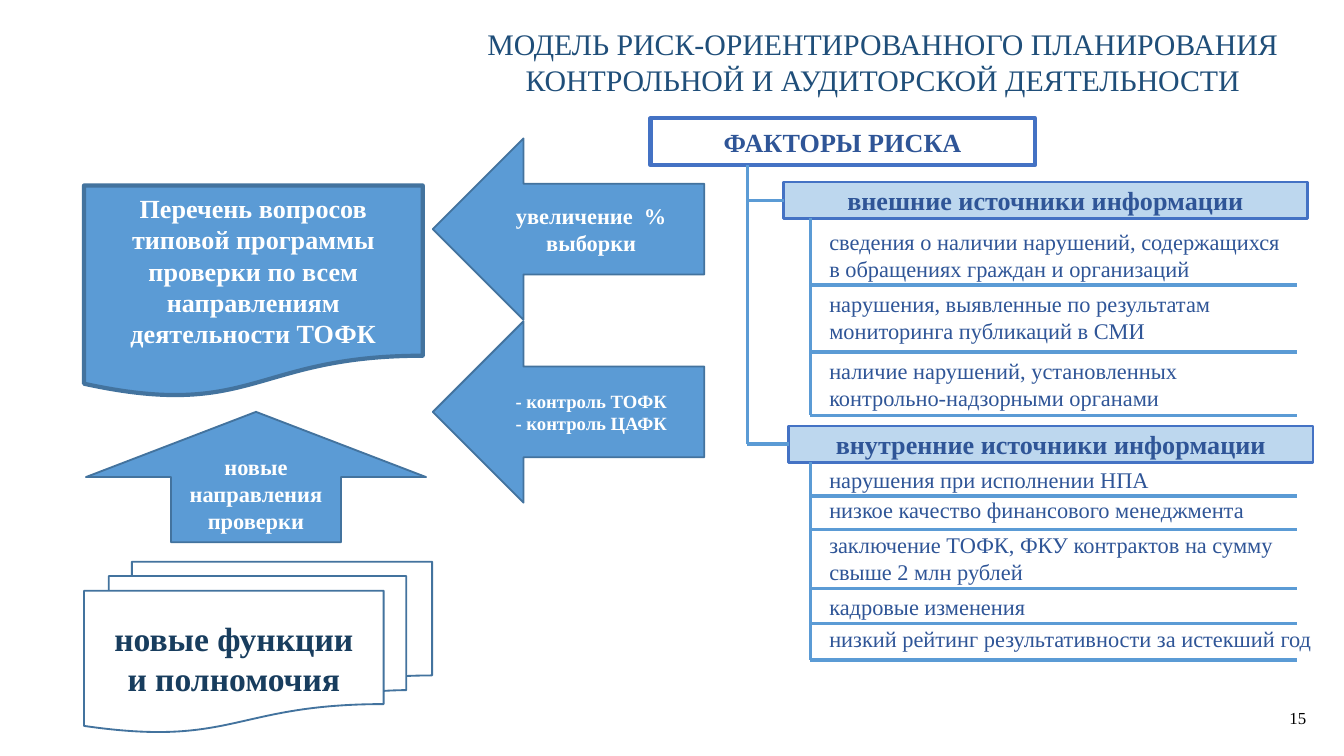
"""Build a slide on risk-based planning of control and audit work."""
from dataclasses import dataclass

from pptx import Presentation
from pptx.dml.color import RGBColor
from pptx.enum.shapes import MSO_CONNECTOR, MSO_SHAPE
from pptx.enum.text import MSO_ANCHOR, MSO_AUTO_SIZE, PP_ALIGN
from pptx.oxml.xmlchemy import OxmlElement
from pptx.shapes.autoshape import Shape
from pptx.shapes.connector import Connector
from pptx.shapes.shapetree import SlideShapes
from pptx.util import Inches, Length, Pt

STRAIGHT = MSO_CONNECTOR.STRAIGHT
RECTANGLE = MSO_SHAPE.RECTANGLE
DOCUMENT = MSO_SHAPE.FLOWCHART_DOCUMENT
MULTIDOCUMENT = MSO_SHAPE.FLOWCHART_MULTIDOCUMENT
LEFT_ARROW = MSO_SHAPE.LEFT_ARROW
UP_ARROW = MSO_SHAPE.UP_ARROW
TOP, MIDDLE = MSO_ANCHOR.TOP, MSO_ANCHOR.MIDDLE
LEFT, CENTER, RIGHT = PP_ALIGN.LEFT, PP_ALIGN.CENTER, PP_ALIGN.RIGHT
FIT_TEXT = MSO_AUTO_SIZE.SHAPE_TO_FIT_TEXT

FONT = "Times New Roman"
COLORS = {
    "title": "1F4E79",
    "text": "2F5597",
    "functions": "183D5E",
    "white": "FFFFFF",
    "black": "000000",
    "blue": "5B9BD5",
    "pale": "BDD7EE",
    "edge": "43739E",
    "frame": "4472C4",
}
COLUMNS, ROWS = 100, 56.25
CELL = 0.1
LEFT_SIDE = 1
TRUNK_X, SPINE_X, RULE_END, ITEM_X, ITEM_W = 55.6, 60.3, 96.5, 61, 38.5


@dataclass(frozen=True)
class Area:
    x: float
    y: float
    w: float
    h: float


@dataclass(frozen=True)
class Style:
    size: float
    color: str
    bold: bool = False
    align: PP_ALIGN = CENTER
    anchor: MSO_ANCHOR = MIDDLE


@dataclass(frozen=True)
class Block:
    kind: MSO_SHAPE
    area: Area
    lines: tuple[str, ...]
    style: Style
    fill: str | None
    edge: str
    weight: float


@dataclass(frozen=True)
class Item:
    lines: tuple[str, ...]
    y: float
    rule_y: float


@dataclass(frozen=True)
class Source:
    title: str
    x: float
    y: float
    items: tuple[Item, ...]


TITLE = Style(16, "title", anchor=TOP)
PAGE = Style(9, "black", align=RIGHT)
HEADING = Style(14, "text", True)
ITEM = Style(12, "text", align=LEFT, anchor=TOP)
WHITE_14, WHITE_12, WHITE_10 = (Style(size, "white", True) for size in (14, 12, 10))

BLOCKS = (
    Block(DOCUMENT, Area(6.25, 13.8, 25.2, 15.8),
          ("Перечень вопросов типовой программы проверки по всем "
           "направлениям деятельности ТОФК",), WHITE_14, "blue", "edge", 2.25),
    Block(RECTANGLE, Area(48.4, 8.8, 28.6, 3.5), ("ФАКТОРЫ РИСКА",),
          HEADING, "white", "frame", 2.25),
    Block(MULTIDOCUMENT, Area(6.25, 41.8, 25.9, 12.7),
          ("новые функции", "и полномочия"),
          Style(18, "functions", True), None, "edge", 1),
    Block(LEFT_ARROW, Area(32.2, 10.3, 20.2, 13.5), ("увеличение  % выборки",),
          WHITE_12, "blue", "edge", 1),
    Block(UP_ARROW, Area(6.4, 30.65, 25.3, 9.7), ("новые направления проверки",),
          WHITE_12, "blue", "edge", 1),
    Block(LEFT_ARROW, Area(32.2, 23.9, 20.2, 13.5),
          ("- контроль ТОФК", "- контроль ЦАФК"), WHITE_10, "blue", "edge", 1),
)
SOURCES = (
    Source("внешние источники информации", 58.3, 13.55, (
        Item(("сведения о наличии нарушений, содержащихся",
              "в обращениях граждан и организаций"), 16.6, 21.2),
        Item(("нарушения, выявленные по результатам",
              "мониторинга публикаций в СМИ"), 21.2, 26.2),
        Item(("наличие нарушений, установленных",
              "контрольно-надзорными органами"), 26.15, 30.9),
    )),
    Source("внутренние источники информации", 58.7, 31.7, (
        Item(("нарушения при исполнении НПА",), 34.25, 36.9),
        Item(("низкое качество финансового менеджмента",), 36.55, 39.4),
        Item(("заключение ТОФК, ФКУ контрактов на сумму",
              "свыше 2 млн рублей"), 39.15, 43.8),
        Item(("кадровые изменения",), 43.7, 46.4),
        Item(("низкий рейтинг результативности за истекший год",), 46.1, 49.1),
    )),
)


def cells(count: float) -> Length:
    """Turn a number of grid cells into a length."""
    return Inches(count * CELL)


def place(area: Area) -> tuple[Length, Length, Length, Length]:
    """Give the left, top, width and height of an area."""
    return cells(area.x), cells(area.y), cells(area.w), cells(area.h)


def write(holder: Shape, lines: tuple[str, ...], style: Style) -> None:
    """Write each line as a paragraph in the holder."""
    frame = holder.text_frame
    frame.word_wrap = True
    frame.vertical_anchor = style.anchor
    for index, line in enumerate(lines):
        paragraph = frame.add_paragraph() if index else frame.paragraphs[0]
        paragraph.alignment = style.align
        run = paragraph.add_run()
        run.text = line
        run.font.name = FONT
        run.font.size = Pt(style.size)
        run.font.bold = style.bold
        run.font.color.rgb = RGBColor.from_string(COLORS[style.color])


def add_label(shapes: SlideShapes, area: Area, lines: tuple[str, ...],
              style: Style, tight: bool = True) -> Shape:
    """Add a text box, with narrow margins when tight."""
    label = shapes.add_textbox(*place(area))
    write(label, lines, style)
    if tight:
        frame = label.text_frame
        frame.margin_left = frame.margin_right = Inches(0.07)
        frame.margin_top = frame.margin_bottom = Inches(0.04)
    return label


def add_block(shapes: SlideShapes, block: Block) -> Shape:
    """Add a preset shape with its text."""
    shape = shapes.add_shape(block.kind, *place(block.area))
    shape.shadow.inherit = False
    if block.fill:
        shape.fill.solid()
        shape.fill.fore_color.rgb = RGBColor.from_string(COLORS[block.fill])
    else:
        shape.fill.background()
    shape.line.color.rgb = RGBColor.from_string(COLORS[block.edge])
    shape.line.width = Pt(block.weight)
    write(shape, block.lines, block.style)
    return shape


def add_line(shapes: SlideShapes, x1: float, y1: float, x2: float, y2: float) -> Connector:
    """Add a straight line between two grid points."""
    line = shapes.add_connector(STRAIGHT, cells(x1), cells(y1), cells(x2), cells(y2))
    line.line.color.rgb = RGBColor.from_string(COLORS["blue"])
    line.line.width = Pt(1.75)
    line.element.spPr.append(OxmlElement("a:effectLst"))
    return line


def add_source(shapes: SlideShapes, source: Source) -> float:
    """Add a source heading with its ruled items and return its branch height."""
    area = Area(source.x, source.y, 39, 2.7)
    heading = add_block(shapes, Block(RECTANGLE, area, (source.title,),
                                      HEADING, "pale", "frame", 1.5))
    middle = area.y + area.h / 2
    branch = add_line(shapes, TRUNK_X, middle, area.x, middle)
    branch.end_connect(heading, LEFT_SIDE)
    add_line(shapes, SPINE_X, area.y + area.h, SPINE_X, source.items[-1].rule_y)
    for item in source.items:
        height = 0.8 + 2 * len(item.lines)
        label = add_label(shapes, Area(ITEM_X, item.y, ITEM_W, height), item.lines, ITEM)
        label.text_frame.auto_size = FIT_TEXT
        add_line(shapes, SPINE_X, item.rule_y, RULE_END, item.rule_y)
    return middle


def main() -> None:
    """Build the slide and save it."""
    deck = Presentation()
    deck.slide_width, deck.slide_height = cells(COLUMNS), cells(ROWS)
    shapes = deck.slides.add_slide(deck.slide_layouts[6]).shapes
    add_label(shapes, Area(31.4, 1.45, 68.6, 6.2),
              ("МОДЕЛЬ РИСК-ОРИЕНТИРОВАННОГО ПЛАНИРОВАНИЯ "
               "КОНТРОЛЬНОЙ И АУДИТОРСКОЙ ДЕЯТЕЛЬНОСТИ",), TITLE, tight=False)
    add_label(shapes, Area(94.6, 51.9, 3.3, 3), ("15",), PAGE)
    for block in BLOCKS:
        add_block(shapes, block)
    branches = [add_source(shapes, source) for source in SOURCES]
    add_line(shapes, TRUNK_X, 12.3, TRUNK_X, max(branches))
    deck.save("out.pptx")


if __name__ == "__main__":
    main()
